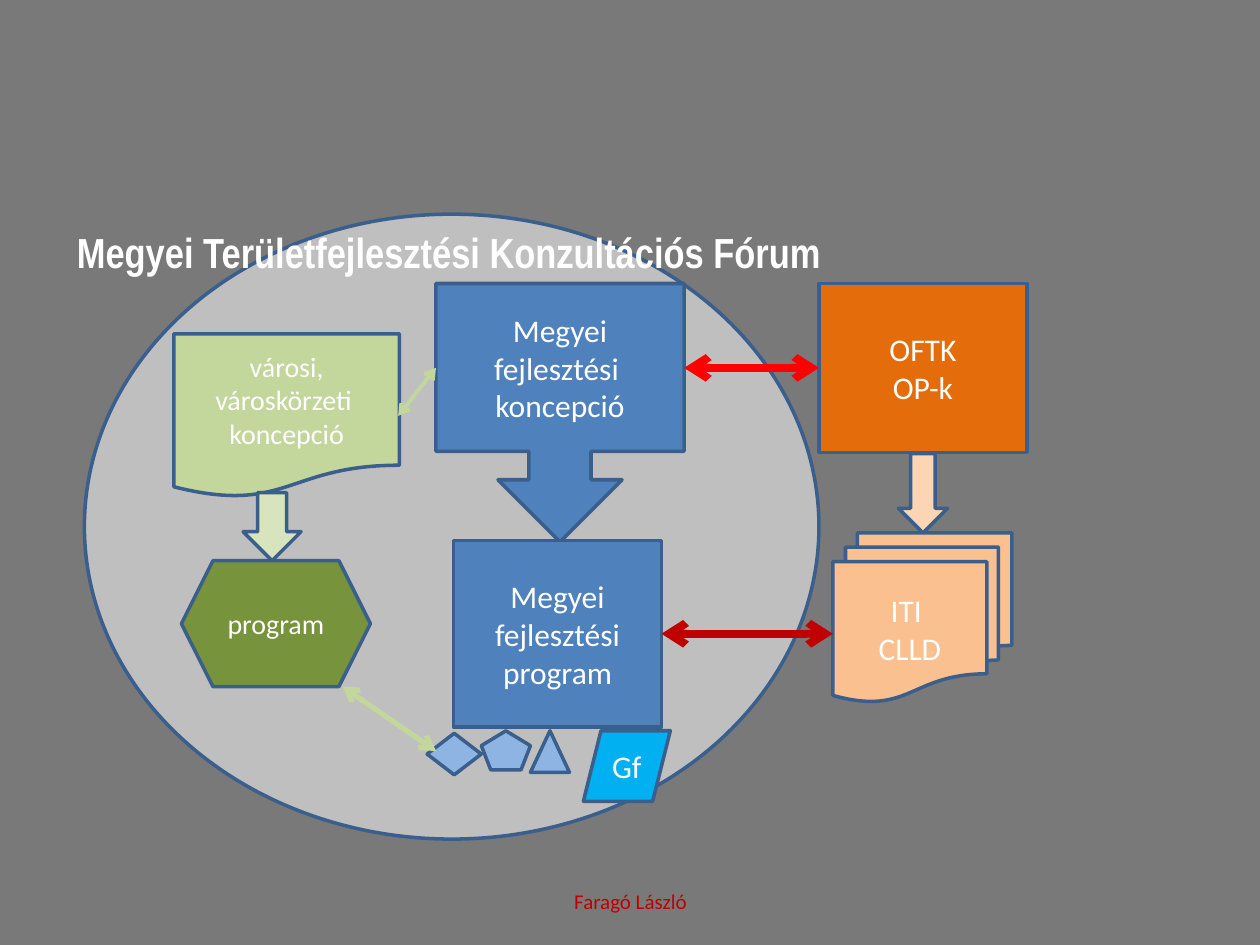
"""Build the slide on county development planning and its consultation forum."""
from lxml import etree
from pptx import Presentation
from pptx.dml.color import RGBColor
from pptx.enum.shapes import MSO_CONNECTOR, MSO_SHAPE
from pptx.enum.text import MSO_ANCHOR, MSO_AUTO_SIZE, PP_ALIGN
from pptx.oxml.ns import qn
from pptx.util import Inches, Pt

RECTANGLE = MSO_SHAPE.RECTANGLE
DOWN_ARROW = MSO_SHAPE.DOWN_ARROW
STRAIGHT = MSO_CONNECTOR.STRAIGHT
CENTER, LEFT = PP_ALIGN.CENTER, PP_ALIGN.LEFT
MIDDLE, TOP = MSO_ANCHOR.MIDDLE, MSO_ANCHOR.TOP
NO_AUTO_SIZE = MSO_AUTO_SIZE.NONE
LEFT_SIDE, RIGHT_SIDE = 1, 3

BACKGROUND = RGBColor(0x79, 0x79, 0x79)
OUTLINE = RGBColor(0x3A, 0x5F, 0x8C)
WHITE = RGBColor(0xFF, 0xFF, 0xFF)
GREY = RGBColor(0xBF, 0xBF, 0xBF)
BLUE = RGBColor(0x4F, 0x81, 0xBD)
LIGHT_BLUE = RGBColor(0x8E, 0xB4, 0xE3)
CYAN = RGBColor(0x00, 0xB0, 0xF0)
ORANGE = RGBColor(0xE4, 0x6C, 0x0A)
LIGHT_ORANGE = RGBColor(0xFA, 0xC0, 0x90)
PALE_ORANGE = RGBColor(0xFC, 0xD5, 0xB5)
GREEN = RGBColor(0x77, 0x93, 0x3C)
LIGHT_GREEN = RGBColor(0xC3, 0xD6, 0x9B)
PALE_GREEN = RGBColor(0xD7, 0xE4, 0xBD)
RED = RGBColor(0xFF, 0x00, 0x00)
DARK_RED = RGBColor(0xC0, 0x00, 0x00)


class SlideBuilder:
    """Hold the shared style and the current slide."""

    font_name = "Calibri"
    outline_width = Pt(2)

    def __init__(self, presentation):
        self.slide = presentation.slides.add_slide(presentation.slide_layouts[5])
        self.shapes = self.slide.shapes
        fill = self.slide.background.fill
        fill.solid()
        fill.fore_color.rgb = BACKGROUND

    def set_text(self, shape, text, size, color=WHITE, align=CENTER, anchor=MIDDLE, **extra):
        frame = shape.text_frame
        frame.text = text
        frame_format = {"word_wrap": True, "auto_size": NO_AUTO_SIZE, "vertical_anchor": anchor}
        for name, value in frame_format.items():
            setattr(frame, name, value)
        font_format = {"name": self.font_name, "size": Pt(size), "bold": False, **extra}
        for paragraph in frame.paragraphs:
            paragraph.alignment = align
            for run in paragraph.runs:
                run.font.color.rgb = color
                for name, value in font_format.items():
                    setattr(run.font, name, value)

    def title(self, text, box):
        title = self.shapes.title
        for name, value in zip(("left", "top", "width", "height"), box):
            setattr(title, name, Inches(value))
        self.set_text(title, text, 24, align=LEFT, anchor=TOP, name="Arial Narrow", bold=True)
        self.shapes._spTree.append(title._element)

    def label(self, text, box, size, color):
        self.set_text(self.shapes.add_textbox(*map(Inches, box)), text, size, color)

    def shape(self, kind, box, color, text="", size=18):
        shape = self.shapes.add_shape(kind, *map(Inches, box))
        shape.shadow.inherit = False
        shape.fill.solid()
        shape.fill.fore_color.rgb = color
        shape.line.color.rgb = OUTLINE
        shape.line.width = self.outline_width
        if text:
            self.set_text(shape, text, size)
        return shape

    def double_arrow(self, start, end, color, width, begin_shape=None, end_shape=None):
        connector = self.shapes.add_connector(STRAIGHT, *map(Inches, start + end))
        if begin_shape is not None:
            connector.begin_connect(begin_shape, RIGHT_SIDE)
        if end_shape is not None:
            connector.end_connect(end_shape, LEFT_SIDE)
        connector.line.color.rgb = color
        connector.line.width = Pt(width)
        line = connector.line._get_or_add_ln()
        for tag in ("a:headEnd", "a:tailEnd"):
            etree.SubElement(line, qn(tag), type="arrow")
        etree.SubElement(connector._element.spPr, qn("a:effectLst"))


def main():
    presentation = Presentation()
    presentation.slide_width = Inches(10)
    presentation.slide_height = Inches(7.5)
    builder = SlideBuilder(presentation)

    builder.shape(MSO_SHAPE.OVAL, (0.67, 1.7, 5.83, 4.96), GREY)
    builder.title("Megyei Területfejlesztési Konzultációs Fórum", (0.51, 1.75, 8.99, 4.95))
    builder.label("Faragó László", (3.42, 6.95, 3.17, 0.4), 12, DARK_RED)

    builder.shape(MSO_SHAPE.DOWN_ARROW_CALLOUT, (3.46, 2.25, 1.97, 2.05), BLUE,
                  "Megyei fejlesztési  koncepció")
    county_program = builder.shape(RECTANGLE, (3.6, 4.29, 1.65, 1.48), BLUE,
                                   "Megyei fejlesztési program")
    national_plan = builder.shape(RECTANGLE, (6.5, 2.25, 1.65, 1.34), ORANGE, "OFTK\nOP-k")
    builder.shape(MSO_SHAPE.FLOWCHART_MULTIDOCUMENT, (6.61, 4.23, 1.42, 1.34), LIGHT_ORANGE,
                  "ITI \nCLLD")
    builder.shape(DOWN_ARROW, (7.13, 3.6, 0.39, 0.63), PALE_ORANGE)
    builder.double_arrow((5.43, 2.92), (6.5, 2.92), RED, 4.5, end_shape=national_plan)
    builder.double_arrow((5.25, 5.03), (6.61, 5.03), DARK_RED, 4.5, begin_shape=county_program)

    builder.shape(MSO_SHAPE.PARALLELOGRAM, (4.63, 5.8, 0.69, 0.56), CYAN, "Gf")
    projects = (
        (MSO_SHAPE.DIAMOND, (3.39, 5.82, 0.43, 0.33)),
        (MSO_SHAPE.REGULAR_PENTAGON, (3.82, 5.8, 0.39, 0.31)),
        (MSO_SHAPE.ISOSCELES_TRIANGLE, (4.21, 5.8, 0.31, 0.33)),
    )
    for kind, box in projects:
        builder.shape(kind, box, LIGHT_BLUE)

    builder.shape(MSO_SHAPE.FLOWCHART_DOCUMENT, (1.38, 2.65, 1.79, 1.3), LIGHT_GREEN,
                  "városi, városkörzeti \nkoncepció", 16)
    builder.shape(MSO_SHAPE.HEXAGON, (1.44, 4.45, 1.5, 1), GREEN, "program", 16)
    builder.shape(DOWN_ARROW, (1.93, 3.91, 0.46, 0.54), PALE_GREEN)
    builder.double_arrow((2.72, 5.45), (3.46, 5.96), LIGHT_GREEN, 3)
    builder.double_arrow((3.16, 3.3), (3.46, 2.92), LIGHT_GREEN, 2.25)

    presentation.save("out.pptx")


if __name__ == "__main__":
    main()
